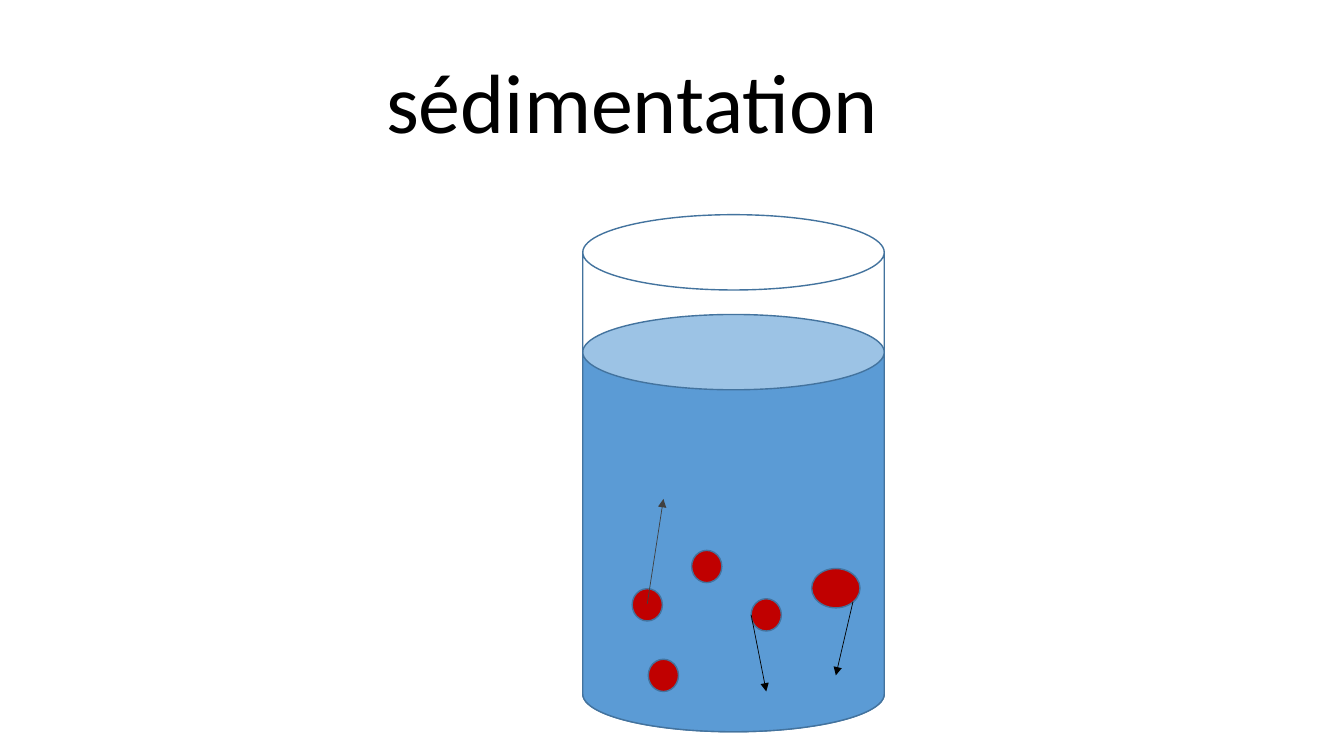
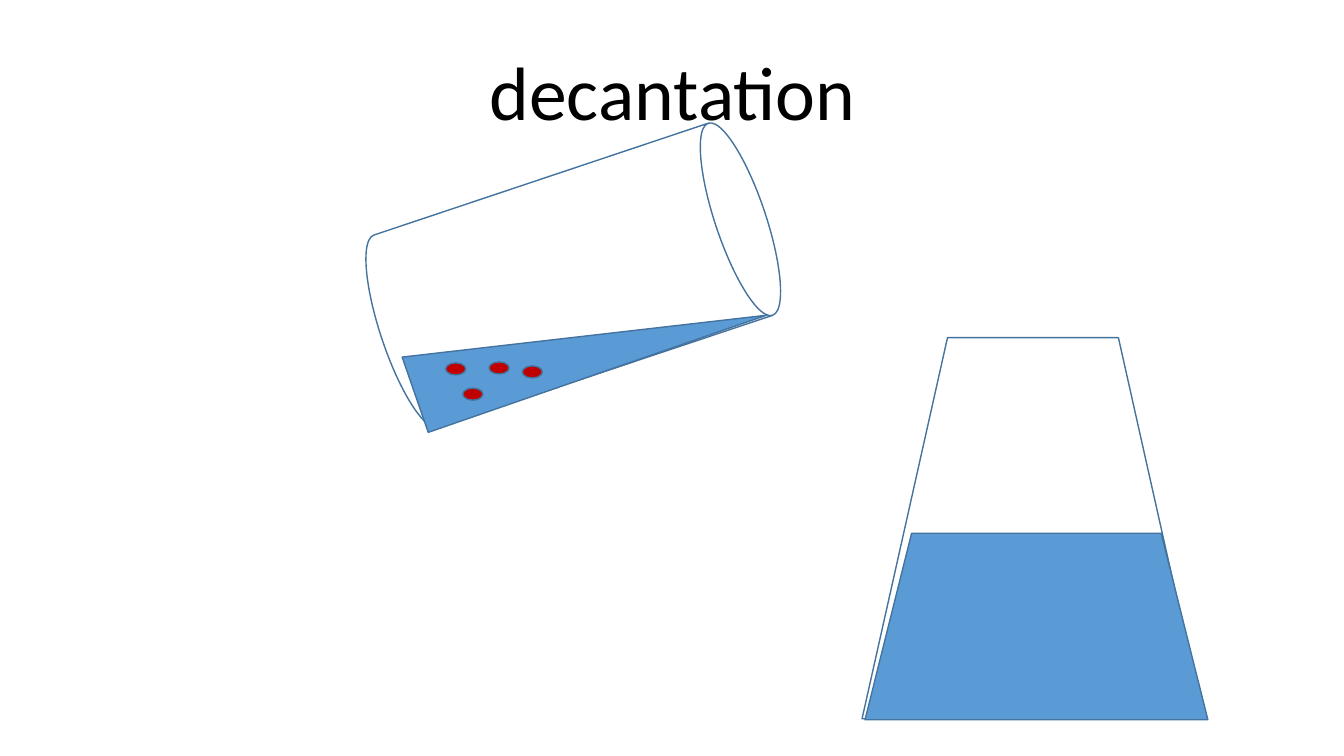
from dataclasses import dataclass

from lxml import etree
from pptx import Presentation
from pptx.dml.color import RGBColor
from pptx.enum.shapes import MSO_CONNECTOR, MSO_SHAPE
from pptx.enum.text import MSO_ANCHOR, MSO_AUTO_SIZE, PP_ALIGN
from pptx.oxml.ns import qn
from pptx.util import Inches, Pt

CAN, ELLIPSE = MSO_SHAPE.CAN, MSO_SHAPE.OVAL
TRAPEZOID, TRIANGLE = MSO_SHAPE.TRAPEZOID, MSO_SHAPE.RIGHT_TRIANGLE
STRAIGHT = MSO_CONNECTOR.STRAIGHT
CENTER, BOTTOM, NO_FIT = PP_ALIGN.CENTER, MSO_ANCHOR.BOTTOM, MSO_AUTO_SIZE.NONE


@dataclass(frozen=True)
class Theme:
    font: str = "Calibri"
    title_large: int = 60
    title_small: int = 54
    text: str = "000000"
    glass: str = "FFFFFF"
    water: str = "5B9BD5"
    particle: str = "C00000"
    outline: str = "43739E"
    rising: str = "404040"
    falling: str = "000000"
    outline_width: float = 1
    arrow_width: float = 0.5


THEME = Theme()


class Deck:
    """Holds the presentation, its style and the current slide."""

    def __init__(self, theme):
        self.theme = theme
        self.prs = Presentation()
        self.prs.slide_width, self.prs.slide_height = Inches(13.33), Inches(7.5)

    def slide(self, title, box, size):
        self.s = self.prs.slides.add_slide(self.prs.slide_layouts[0])
        subtitle = self.s.placeholders[1].element
        subtitle.getparent().remove(subtitle)

        sp = self.s.shapes.title
        sp.left, sp.top, sp.width, sp.height = map(Inches, box)
        tf = sp.text_frame
        tf.text = title
        tf.word_wrap, tf.auto_size, tf.vertical_anchor = True, NO_FIT, BOTTOM
        p = tf.paragraphs[0]
        p.alignment, p.line_spacing = CENTER, 0.9
        p.font.name, p.font.size = self.theme.font, Pt(size)
        p.font.color.rgb = RGBColor.from_string(self.theme.text)

    def shape(self, kind, box, fill, rotation=0):
        sp = self.s.shapes.add_shape(kind, *map(Inches, box))
        sp.rotation = rotation
        sp.shadow.inherit = False
        sp.fill.solid()
        sp.fill.fore_color.rgb = RGBColor.from_string(fill)
        sp.line.color.rgb = RGBColor.from_string(self.theme.outline)
        sp.line.width = Pt(self.theme.outline_width)

    def particles(self, spots, width, height):
        for left, top in spots:
            self.shape(ELLIPSE, (left, top, width, height), self.theme.particle)

    def arrow(self, start, end, color):
        line = self.s.shapes.add_connector(STRAIGHT, *map(Inches, start + end))
        line.line.color.rgb = RGBColor.from_string(color)
        line.line.width = Pt(self.theme.arrow_width)
        ln = line.line._get_or_add_ln()
        etree.SubElement(ln, qn("a:tailEnd"), type="triangle")
        etree.SubElement(line.element.spPr, qn("a:effectLst"))


def sedimentation(deck):
    t = deck.theme
    deck.slide("sédimentation", (1.27, 0.4, 10, 1.15), t.title_large)

    # Beaker: the glass and the water share a bottom edge
    bottom = 7.26
    for top, fill in ((2.13, t.glass), (3.12, t.water)):
        deck.shape(CAN, (5.78, top, 2.99, bottom - top), fill)

    # Particles, one of them larger
    deck.particles([(6.27, 5.84)], 0.3, 0.32)
    deck.particles([(8.05, 5.64)], 0.48, 0.39)
    deck.particles([(6.43, 6.54), (7.45, 5.94), (6.86, 5.46)], 0.3, 0.32)

    # Directions of movement
    deck.arrow((6.42, 5.99), (6.58, 4.95), t.rising)
    deck.arrow((8.46, 5.97), (8.29, 6.7), t.falling)
    deck.arrow((7.45, 6.1), (7.6, 6.86), t.falling)


def decantation(deck):
    t = deck.theme
    deck.slide("decantation", (1.67, 0.44, 10, 0.97), t.title_small)

    # Tilted beaker with the remaining water and particles
    deck.shape(CAN, (4.68, 0.73, 2.01, 4), t.glass, 71.5)
    deck.shape(TRIANGLE, (4.02, 2.94, 3.55, 0.79), t.water, 340.9)
    deck.particles([(4.59, 3.85), (4.85, 3.59), (4.42, 3.6), (5.18, 3.63)],
                   0.2, 0.12)

    # Receiving flask and its water
    deck.shape(TRAPEZOID, (8.55, 3.35, 3.39, 3.78), t.glass)
    deck.shape(TRAPEZOID, (8.58, 5.29, 3.4, 1.85), t.water)


def main():
    deck = Deck(THEME)
    sedimentation(deck)
    decantation(deck)
    deck.prs.save("out.pptx")


if __name__ == "__main__":
    main()
